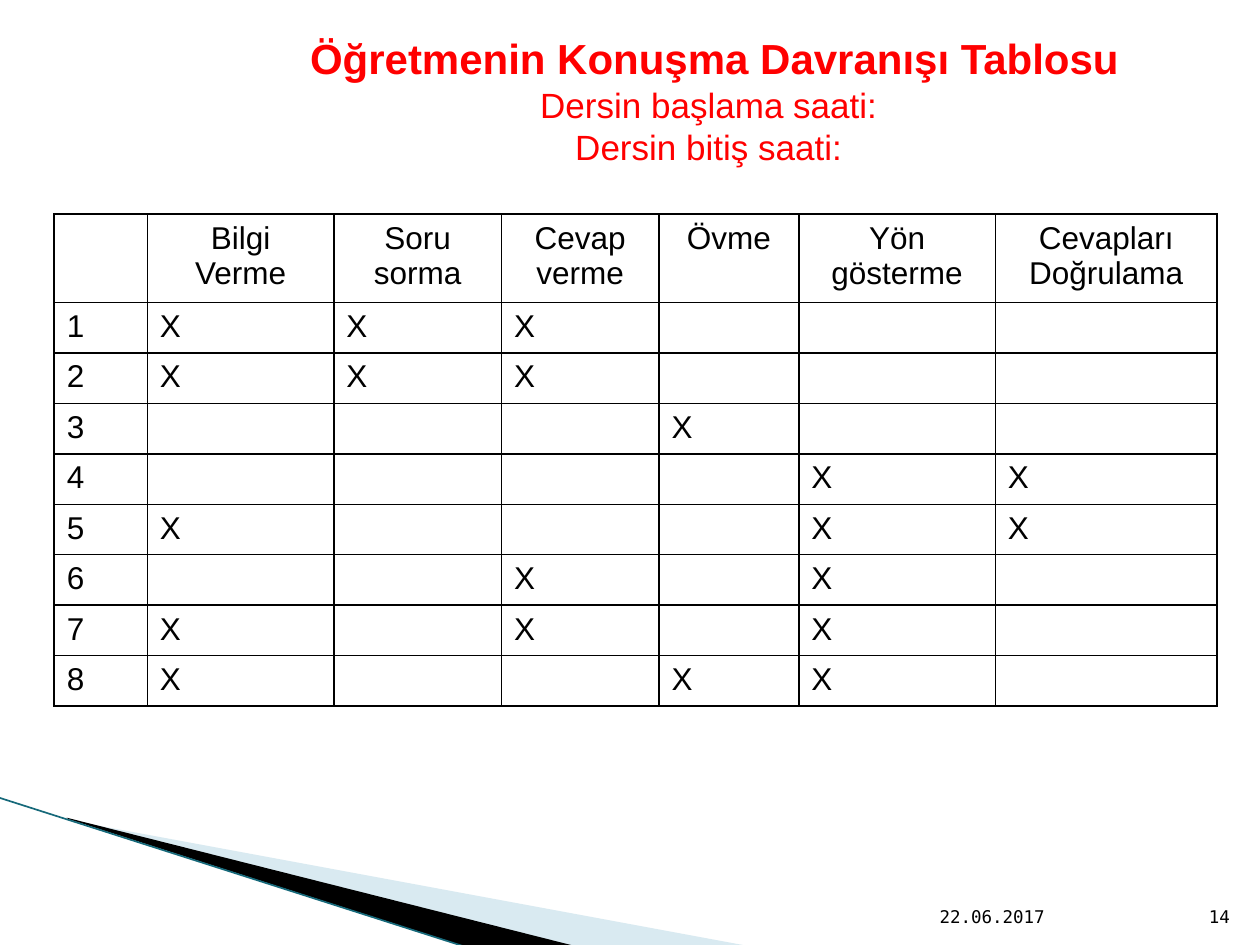
import pptx
import pptx.util
import pptx.dml.color
import pptx.enum.shapes
import pptx.enum.text
import pptx.oxml
import pptx.oxml.ns
from lxml import etree

Inches = pptx.util.Inches
Align = pptx.enum.text.PP_ALIGN
Anchor = pptx.enum.text.MSO_ANCHOR

COLORS = {"text": "000000", "title": "FF0000", "wedge": "A0CBDC",
          "band": "000000", "edge": "16697A", "border": "000000"}
FORMATS = {
    "title": {"name": "Arial", "size": pptx.util.Pt(24), "bold": True},
    "times": {"name": "Arial", "size": pptx.util.Pt(20), "bold": False},
    "table": {"name": "Arial", "size": pptx.util.Pt(18), "bold": False},
    "footer": {"name": "DejaVu Sans Mono", "size": pptx.util.Pt(10)},
}

COLUMN_WIDTHS = [0.74, 1.48, 1.33, 1.25, 1.11, 1.56, 1.76]
HEADINGS = ["", "Bilgi\nVerme", "Soru sorma", "Cevap verme", "Övme",
            "Yön gösterme", "Cevapları Doğrulama"]
# Columns marked with X in each numbered observation
MARKS = [(1, 2, 3), (1, 2, 3), (4,), (5, 6), (1, 5, 6), (3, 5), (1, 3, 5), (1, 4, 5)]


def rgb(color):
    return pptx.dml.color.RGBColor.from_string(COLORS[color])


class SlideBuilder:
    def __init__(self, slide):
        self.slide = slide

    def add_lines(self, frame, lines, align, color="text"):
        """Fill a text frame with (text, format name) lines, one paragraph each."""
        for index, (text, style) in enumerate(lines):
            para = frame.add_paragraph() if index else frame.paragraphs[0]
            para.alignment = align
            span = para.add_run()
            span.text = text
            for key, value in FORMATS[style].items():
                setattr(span.font, key, value)
            span.font.color.rgb = rgb(color)

    def text(self, area, lines, align, color="text", anchor=Anchor.TOP):
        box = self.slide.shapes.add_textbox(*map(Inches, area))
        box.text_frame.word_wrap = True
        box.text_frame.vertical_anchor = anchor
        self.add_lines(box.text_frame, lines, align, color)

    def polygon(self, points, color, opacity=100):
        corners = [(Inches(x), Inches(y)) for x, y in points]
        builder = self.slide.shapes.build_freeform(*corners[0], scale=1.0)
        builder.add_line_segments(corners[1:], close=True)
        shape = builder.convert_to_shape()
        shape.shadow.inherit = False
        shape.fill.solid()
        shape.fill.fore_color.rgb = rgb(color)
        shape.line.fill.background()
        if opacity < 100:
            tag = pptx.oxml.ns.qn("a:srgbClr")
            fill_color = next(shape._element.spPr.iter(tag))
            alpha = etree.SubElement(fill_color, pptx.oxml.ns.qn("a:alpha"))
            alpha.set("val", str(opacity * 1000))

    def line(self, start, end, color, width):
        line = self.slide.shapes.add_connector(
            pptx.enum.shapes.MSO_CONNECTOR.STRAIGHT, *map(Inches, start + end))
        line.line.color.rgb = rgb(color)
        line.line.width = pptx.util.Pt(width)
        etree.SubElement(line._element.spPr, pptx.oxml.ns.qn("a:effectLst"))

    def border(self, cell, width):
        properties = cell._tc.get_or_add_tcPr()
        for index, side in enumerate(("lnL", "lnR", "lnT", "lnB")):
            properties.insert(index, pptx.oxml.parse_xml(
                f'<a:{side} {pptx.oxml.ns.nsdecls("a")} w="{pptx.util.Pt(width)}">'
                f'<a:solidFill><a:srgbClr val="{COLORS["border"]}"/></a:solidFill>'
                f'</a:{side}>'))

    def table(self, left, top, widths, heights, rows):
        area = map(Inches, (left, top, sum(widths), sum(heights)))
        table = self.slide.shapes.add_table(len(rows), len(widths), *area).table
        table.first_row = table.horz_banding = False
        for column, width in zip(table.columns, widths):
            column.width = Inches(width)
        for index, (row, height) in enumerate(zip(rows, heights)):
            table.rows[index].height = Inches(height)
            align = Align.JUSTIFY if index else Align.CENTER
            for cell, text in zip(table.rows[index].cells, row):
                cell.fill.background()
                self.border(cell, 1)
                if text:
                    lines = [(part, "table") for part in text.split("\n")]
                    self.add_lines(cell.text_frame, lines, align)


def main():
    deck = pptx.Presentation()
    deck.slide_width, deck.slide_height = Inches(10), Inches(7.5)
    page = SlideBuilder(deck.slides.add_slide(deck.slide_layouts[6]))

    page.polygon([(0.55, 6.51), (5.95, 7.51), (4.56, 7.51), (0.55, 6.5)], "wedge", 40)
    page.polygon([(0.53, 6.49), (4.57, 7.51), (3.72, 7.52), (0.54, 6.5)], "band")
    page.line((-0.01, 6.33), (3.71, 7.52), "edge", 0.95)

    page.text((2.17, 0.21, 6.91, 1.18),
              [(" Öğretmenin Konuşma Davranışı Tablosu", "title"),
               ("Dersin başlama saati:", "times"),
               ("Dersin bitiş saati:", "times")],
              Align.CENTER, "title")

    rows = [HEADINGS]
    for number, marked in enumerate(MARKS, 1):
        rows.append([str(number)] + ["X" if column in marked else ""
                                     for column in range(1, len(HEADINGS))])
    page.table(0.43, 1.7, COLUMN_WIDTHS, [0.7] + [0.4] * len(MARKS), rows)

    page.text((7.36, 7.01, 2.1, 0.4), [("22.06.2017", "footer")],
              Align.LEFT, anchor=Anchor.BOTTOM)
    page.text((9.46, 7.01, 0.4, 0.4), [("14", "footer")],
              Align.RIGHT, anchor=Anchor.BOTTOM)
    deck.save("out.pptx")


if __name__ == "__main__":
    main()
